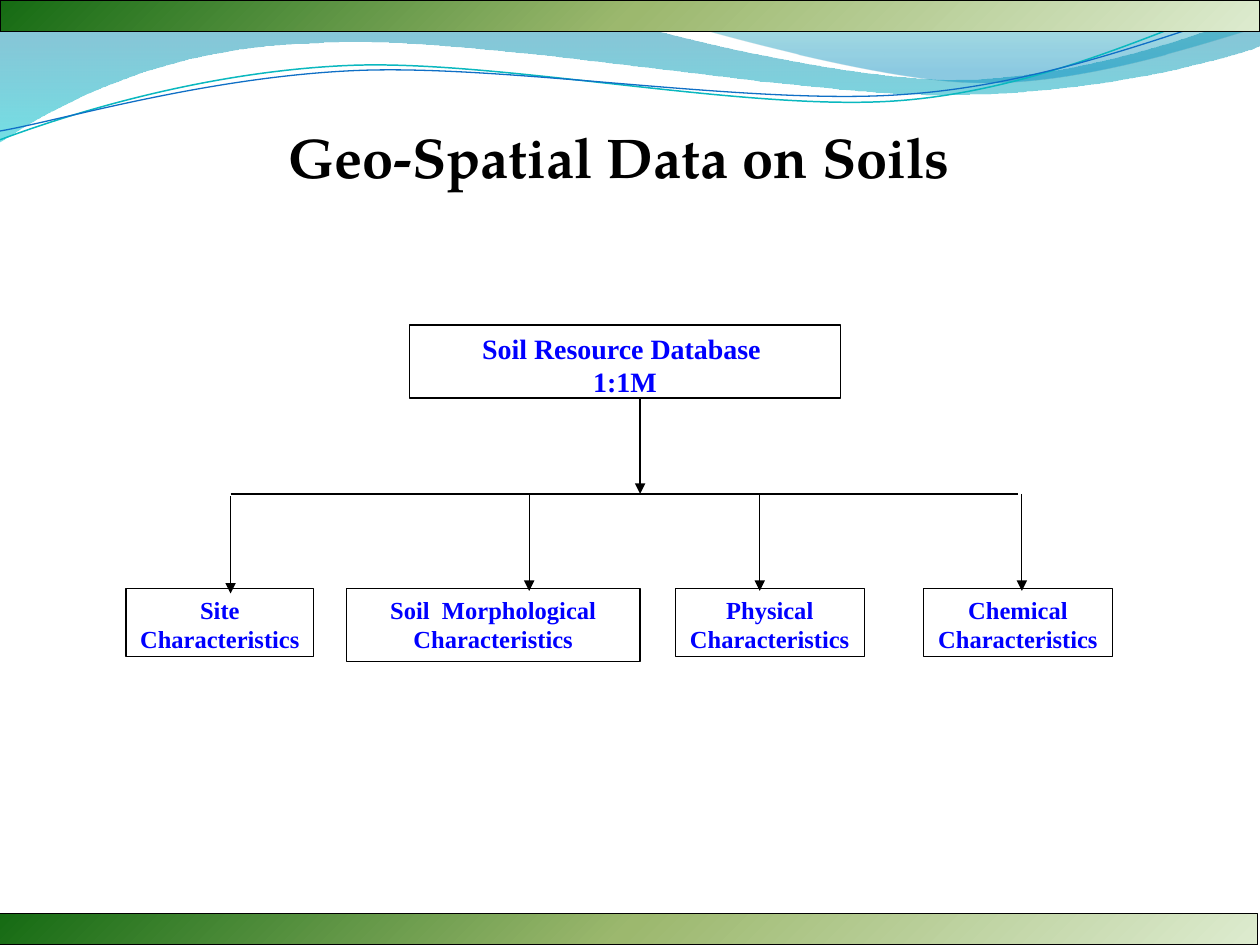
from lxml import etree
from pptx import Presentation
from pptx.dml.color import RGBColor
from pptx.enum import shapes, text
from pptx.oxml import ns
from pptx.util import Inches, Pt

COLORS = {
    "black": "000000", "white": "FFFFFF", "label": "0000FF",
    "teal": "0AB8BF", "blue": "0F6FC6",
    "band light": "DDEBCF", "band middle": "9CB86E", "band dark": "156B13",
    "wave top": "0074A1", "wave bottom": "00C6CF",
    "crest top": "00A1A9", "crest bottom": "008BBF",
}
TITLE = "Geo-Spatial Data on Soils"
ROOT = (["Soil Resource Database ", "1:1M"], 3.25, 2.58, 3.42, 0.58)
BRANCHES = [
    ("Site Characteristics", 1, 1.49, 0.54),
    ("Soil  Morphological Characteristics", 2.75, 2.33, 0.58),
    ("Physical Characteristics", 5.36, 1.5, 0.54),
    ("Chemical Characteristics", 7.33, 1.5, 0.54),
]
BRANCH_TOP = 4.67
BUS_Y = 3.92
BUS = (1.83, BUS_Y, 8.08, BUS_Y)
ARROWS = [
    (1.83, 3.94, 4.71), (4.2, BUS_Y, 4.69), (6.03, BUS_Y, 4.69),
    (8.11, BUS_Y, 4.69), (5.08, 3.17, BUS_Y),
]
BANDS = [(0, 0), (-0.02, 7.25)]
BAND_STOPS = [(0, "band light", 100), (0, "band light", 100),
              (50, "band middle", 100), (100, "band dark", 100)]
WAVES = [
    ([(0, 0), (4.4, -0.01),
      (4.76, 0.17, 6.64, 0.63, 7.58, 0.63), (8.53, 0.63, 9.58, 0.26, 10, 0.09),
      (10.01, 0.36),
      (9.83, 0.44, 8.7, 0.76, 7.46, 0.75), (6.22, 0.75, 3.82, 0.28, 2.57, 0.34),
      (1.29, 0.36, 0.46, 0.83, -0.01, 1.13), (0, 0)],
     [(0, "wave top", 45), (100, "wave bottom", 55)]),
    ([(4.79, -0.01),
      (5.09, 0.11, 6.82, 0.62, 7.69, 0.65), (8.56, 0.69, 9.61, 0.32, 10, 0.21),
      (10, 0), (4.79, -0.01)],
     [(0, "crest top", 30), (80, "crest bottom", 45)]),
]
RIPPLES = [
    ([(0, 1.11), (0.48, 0.93, 1.58, 0.57, 2.77, 0.52),
      (3.95, 0.47, 5.93, 0.89, 7.13, 0.8), (8.33, 0.71, 9.38, 0.15, 9.98, -0.02)],
     "teal", 0.85),
    ([(0, 1.04), (0.47, 0.96, 1.64, 0.61, 2.83, 0.56),
      (4.03, 0.51, 5.97, 0.84, 7.17, 0.75), (8.36, 0.67, 9.41, 0.21, 10, 0.06)],
     "blue", 0.75),
]


def rgb(name):
    return RGBColor.from_string(COLORS[name])


def child(parent, tag, **attributes):
    element = etree.SubElement(parent, ns.qn(tag))
    for key, value in attributes.items():
        element.set(key, str(value))
    return element


def set_gradient(shape, stops, radial=False):
    shape.fill.gradient()
    gradient = shape.fill._xPr.find(ns.qn("a:gradFill"))
    for element in list(gradient):
        gradient.remove(element)
    stop_list = child(gradient, "a:gsLst")
    for position, color, opacity in stops:
        stop = child(stop_list, "a:gs", pos=position * 1000)
        value = child(stop, "a:srgbClr", val=COLORS[color])
        if opacity < 100:
            child(value, "a:alpha", val=opacity * 1000)
    if radial:
        focus = child(gradient, "a:path", path="circle")
        child(focus, "a:fillToRect", l=100000, t=100000)
    else:
        child(gradient, "a:lin", ang=5400000, scaled=1)


def set_line(shape, color="black", width=0.75):
    shape.line.color.rgb = rgb(color)
    shape.line.width = Pt(width)


def add_curve(slide, segments, close):
    start, *rest = segments
    points = [(Inches(segment[i]), Inches(segment[i + 1]))
              for segment in rest for i in range(0, len(segment), 2)]
    builder = slide.shapes.build_freeform(*map(Inches, start))
    builder.add_line_segments(points, close=close)
    shape = builder.convert_to_shape()
    shape.shadow.inherit = False
    steps = iter(list(shape._element.iter(ns.qn("a:lnTo"))))
    for segment in rest:
        step = next(steps)
        if len(segment) == 6:
            curve = etree.Element(ns.qn("a:cubicBezTo"))
            step.addprevious(curve)
            for part in (step, next(steps), next(steps)):
                curve.append(part[0])
                part.getparent().remove(part)
    return shape


def add_rectangle(slide, left, top, width, height):
    shape = slide.shapes.add_shape(shapes.MSO_SHAPE.RECTANGLE,
                                   *map(Inches, (left, top, width, height)))
    shape.shadow.inherit = False
    set_line(shape)
    return shape


def format_text(text_frame, size, font, color):
    for paragraph in text_frame.paragraphs:
        paragraph.alignment = text.PP_ALIGN.CENTER
        for run in paragraph.runs:
            run.font.size = Pt(size)
            run.font.name = font
            run.font.bold = True
            run.font.color.rgb = rgb(color)


def add_box(slide, lines, left, top, width, height, size, space_after=0):
    box = add_rectangle(slide, left, top, width, height)
    box.fill.solid()
    box.fill.fore_color.rgb = rgb("white")
    frame = box.text_frame
    frame.text = "\n".join(lines)
    frame.word_wrap = True
    frame.vertical_anchor = text.MSO_ANCHOR.TOP
    format_text(frame, size, "Times New Roman", "label")
    for paragraph in frame.paragraphs:
        paragraph.space_after = Pt(space_after)


def add_line(slide, x1, y1, x2, y2, arrow=False):
    connector = slide.shapes.add_connector(shapes.MSO_CONNECTOR.STRAIGHT,
                                           *map(Inches, (x1, y1, x2, y2)))
    set_line(connector)
    if arrow:
        child(connector.line._get_or_add_ln(), "a:tailEnd", type="triangle")
    child(connector._element.spPr, "a:effectLst")


def main():
    presentation = Presentation()
    presentation.slide_width = Inches(10)
    presentation.slide_height = Inches(7.5)
    slide = presentation.slides.add_slide(presentation.slide_layouts[5])

    for segments, stops in WAVES:
        wave = add_curve(slide, segments, close=True)
        set_gradient(wave, stops)
        wave.line.fill.background()
    for segments, color, width in RIPPLES:
        ripple = add_curve(slide, segments, close=False)
        ripple.fill.background()
        set_line(ripple, color, width)

    lines, *place = ROOT
    add_box(slide, lines, *place, size=16)
    for label, left, width, height in BRANCHES:
        add_box(slide, [label], left, BRANCH_TOP, width, height, size=14, space_after=10)
    add_line(slide, *BUS)
    for x, top, bottom in ARROWS:
        add_line(slide, x, top, x, bottom, arrow=True)

    title = slide.shapes.title
    title.left, title.top, title.width, title.height = map(Inches, (0.25, 0.92, 9.33, 0.64))
    title.text_frame.text = TITLE
    title.text_frame.auto_size = text.MSO_AUTO_SIZE.NONE
    title.text_frame.vertical_anchor = text.MSO_ANCHOR.TOP
    format_text(title.text_frame, 32, "TeX Gyre Pagella", "black")

    for left, top in BANDS:
        band = add_rectangle(slide, left, top, 10, 0.25)
        set_gradient(band, BAND_STOPS, radial=True)

    presentation.save("out.pptx")


if __name__ == "__main__":
    main()
